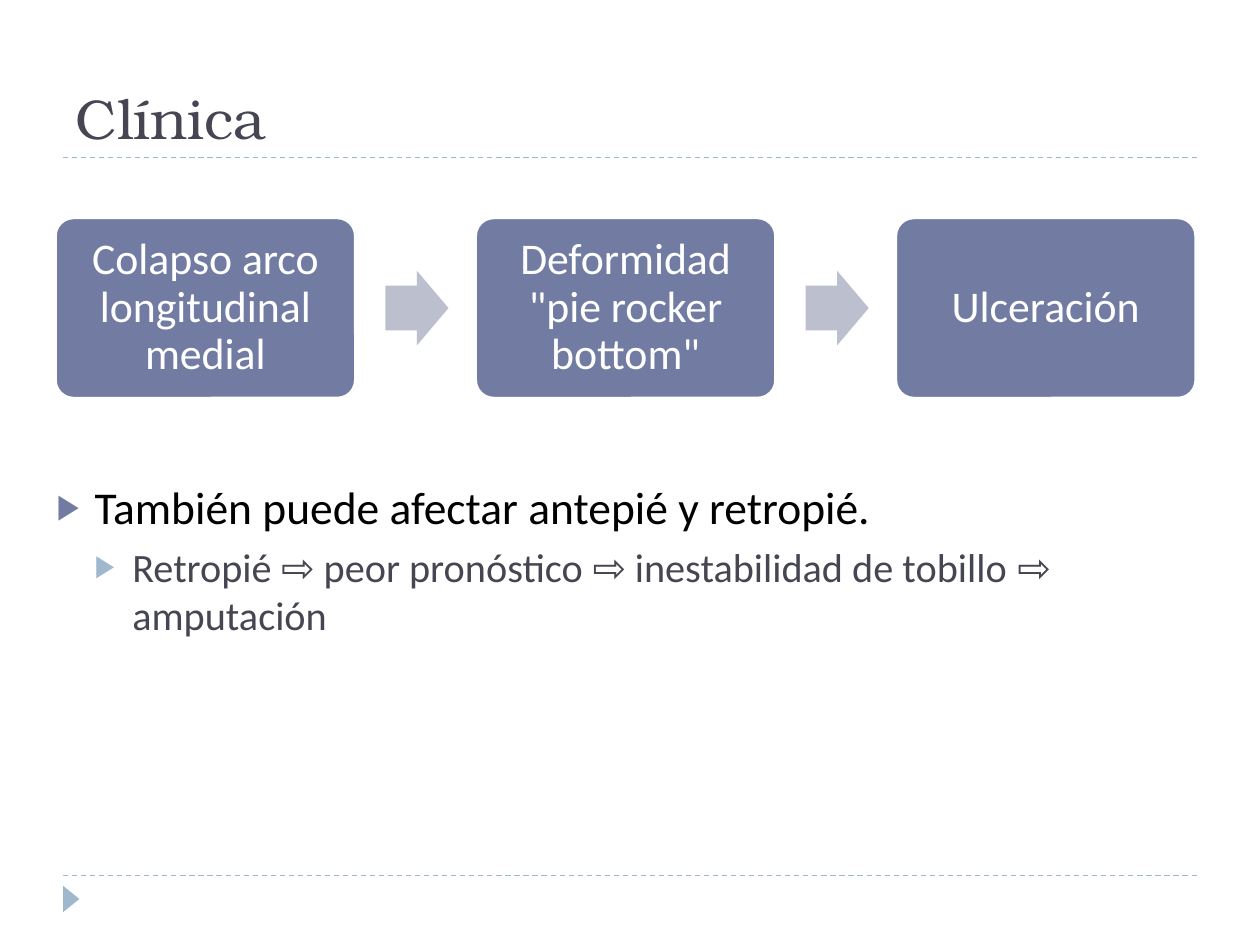
from lxml.etree import SubElement as Sub
from pptx import Presentation
from pptx.dml.color import RGBColor
from pptx.enum.dml import MSO_LINE
from pptx.enum.shapes import MSO_CONNECTOR, MSO_SHAPE as Kind
from pptx.enum.text import MSO_ANCHOR as Anchor, MSO_AUTO_SIZE as Auto, PP_ALIGN as Align
from pptx.oxml.ns import qn
from pptx.util import Inches, Pt

TITLE = "Clínica"
STEPS = ["Colapso arco longitudinal medial", 'Deformidad "pie rocker bottom"', "Ulceración"]
POINTS = [
    ("También puede afectar antepié y retropié.", 26, "000000", "727CA3", 6),
    ("Retropié ⇨ peor pronóstico ⇨ inestabilidad de tobillo ⇨ amputación",
     23, "464653", "9FB8CD", 5),
]
RULES = [1.25, 6.95]
LEFT, TOP, WIDE, HIGH, PITCH = 0.44, 1.73, 2.38, 1.43, 3.335
INDENT = 0.3


def color(code):
    return RGBColor.from_string(code)


def style(para, size, code, face="Calibri"):
    para.font.size = Pt(size)
    para.font.name = face
    para.font.color.rgb = color(code)


def place(item, *box):
    item.left, item.top, item.width, item.height = map(Inches, box)


def add_shape(kind, box, fill):
    shape = slide.shapes.add_shape(kind, *map(Inches, box))
    shape.shadow.inherit = False
    shape.fill.solid()
    shape.fill.fore_color.rgb = color(fill)
    shape.line.fill.background()
    return shape


def add_rule(y):
    rule = slide.shapes.add_connector(
        MSO_CONNECTOR.STRAIGHT, *map(Inches, (0.5, y, 9.5, y)))
    rule.line.color.rgb = color("9FB8CD")
    rule.line.width = Pt(0.75)
    rule.line.dash_style = MSO_LINE.DASH
    Sub(rule._element.spPr, qn("a:effectLst"))


def add_step(text, x):
    card = add_shape(Kind.ROUNDED_RECTANGLE, (x, TOP, WIDE, HIGH), "727CA3")
    card.adjustments[0] = 0.1
    card.line.color.rgb = color("FFFFFF")
    card.line.width = Pt(1.5)
    frame = card.text_frame
    frame.word_wrap = True
    frame.vertical_anchor = Anchor.MIDDLE
    frame.margin_left = frame.margin_right = Inches(0.11)
    frame.margin_top = frame.margin_bottom = Inches(0.11)
    frame.text = text
    para = frame.paragraphs[0]
    para.alignment = Align.CENTER
    para.line_spacing = 0.9
    style(para, 25, "FFFFFF")


def add_bullet(para, level, code):
    props = para._p.get_or_add_pPr()
    props.set("marL", str(Inches(INDENT * (level + 1))))
    props.set("indent", str(-Inches(INDENT)))
    Sub(Sub(props, qn("a:buClr")), qn("a:srgbClr"), val=code)
    Sub(props, qn("a:buSzPct"), val="76000")
    Sub(props, qn("a:buChar"), char="▶")


deck = Presentation()
deck.slide_width, deck.slide_height = Inches(10), Inches(7.5)
slide = deck.slides.add_slide(deck.slide_layouts[1])

for y in RULES:
    add_rule(y)
mark = add_shape(Kind.ISOSCELES_TRIANGLE, (0.46, 7.07, 0.21, 0.13), "9FB8CD")
mark.rotation = 90

title = slide.shapes.title
place(title, 0.5, 0.25, 9, 1)
title.text = TITLE
title.text_frame.auto_size = Auto.NONE
title.text_frame.vertical_anchor = Anchor.BOTTOM
head = title.text_frame.paragraphs[0]
head.alignment = Align.LEFT
style(head, 32, "464653", "TeX Gyre Bonum")

for i, step in enumerate(STEPS):
    x = LEFT + i * PITCH
    add_step(step, x)
    if i < len(STEPS) - 1:
        arrow = add_shape(Kind.RIGHT_ARROW, (x + 2.62, 2.15, 0.5, 0.59), "BCBFCE")
        arrow.adjustments[0] = 0.6

body = slide.placeholders[1]
place(body, 0.35, 3.75, 9.13, 2.98)
frame = body.text_frame
frame.text = "\n".join(point[0] for point in POINTS)
frame.auto_size = Auto.NONE
for level, (para, point) in enumerate(zip(frame.paragraphs, POINTS)):
    text, size, ink, tint, gap = point
    para.level = level
    para.space_before = Pt(gap)
    style(para, size, ink)
    add_bullet(para, level, tint)

deck.save("out.pptx")
